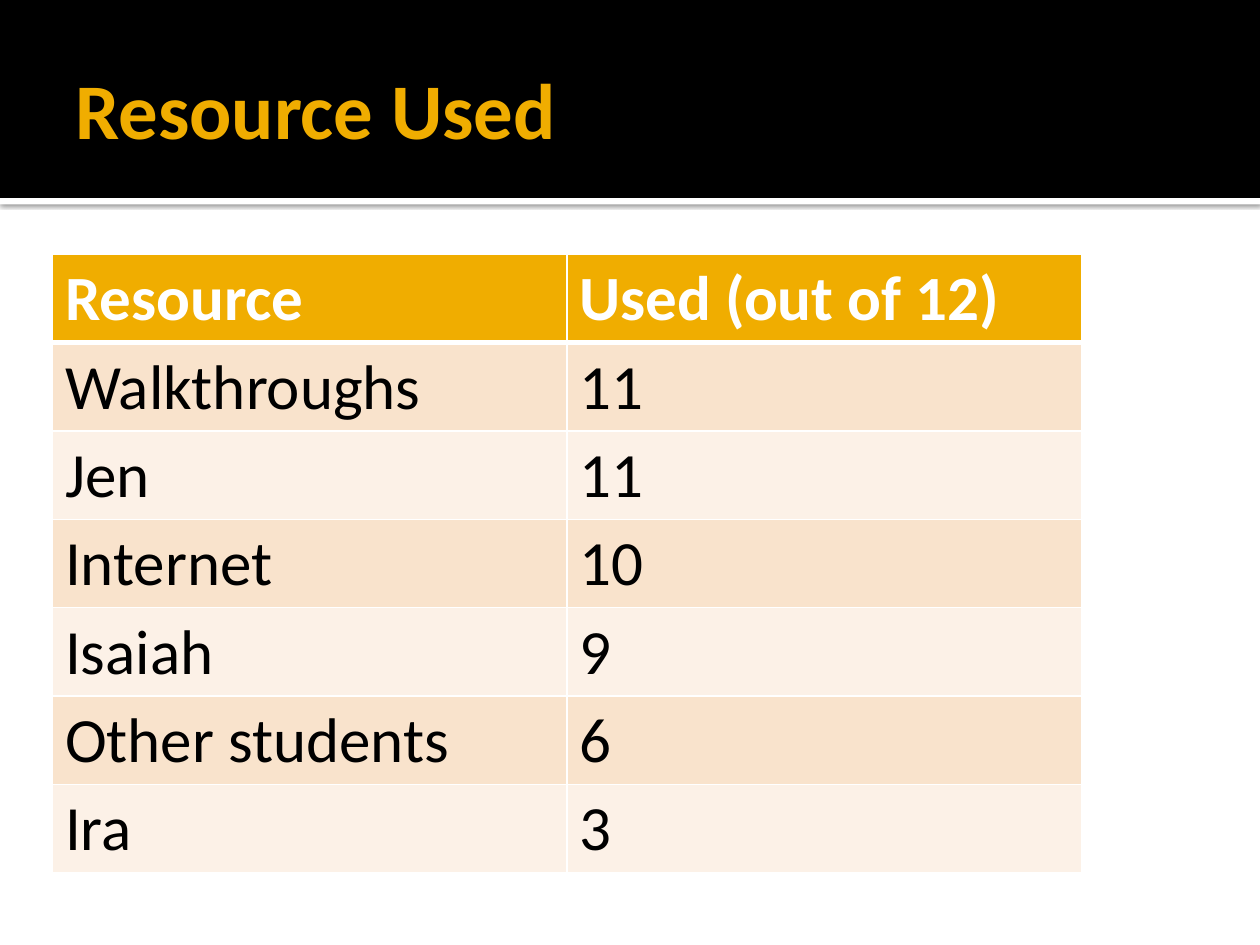
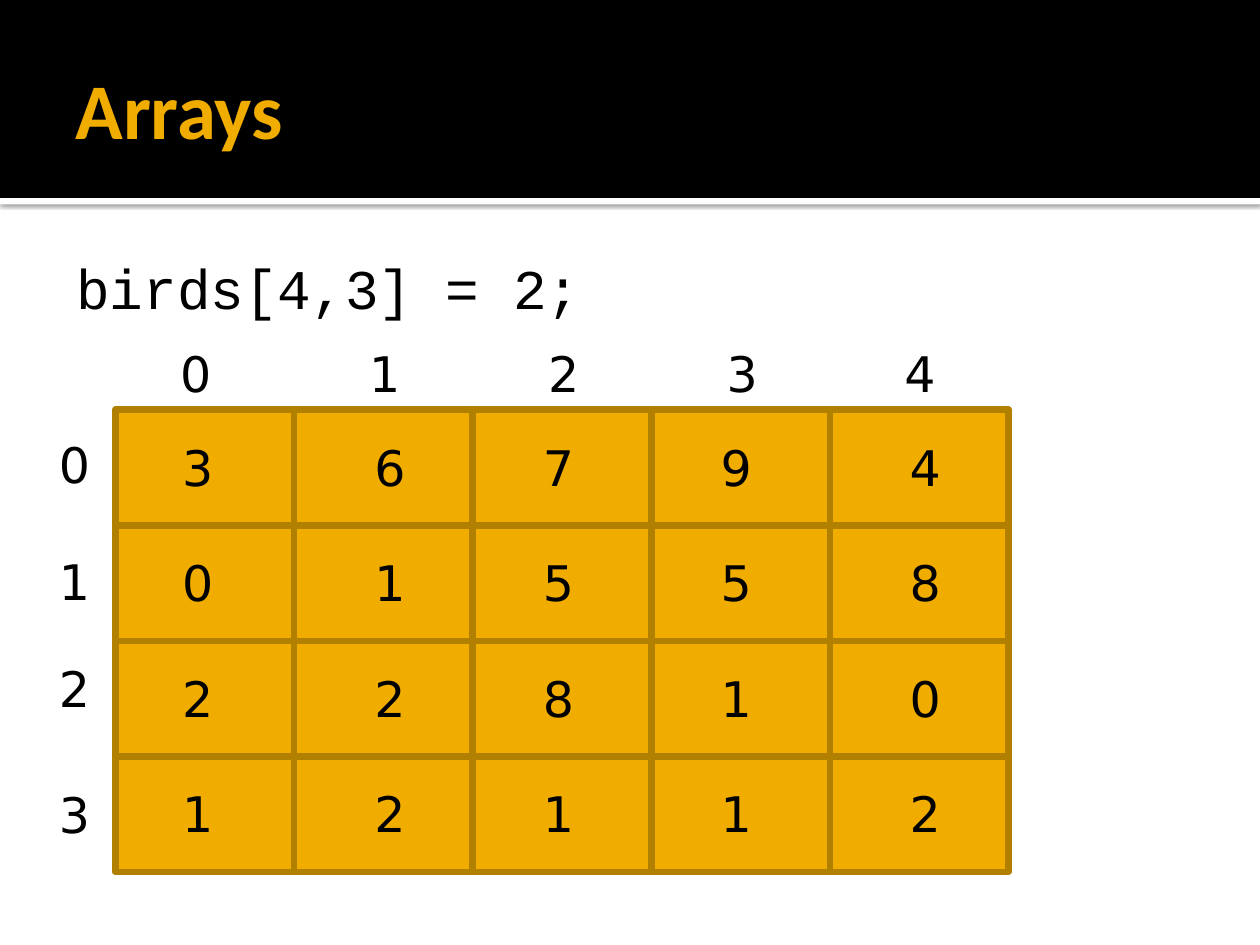
from lxml.etree import SubElement
from pptx import Presentation
from pptx.dml.color import RGBColor
from pptx.enum.shapes import MSO_SHAPE
from pptx.enum.text import MSO_ANCHOR, PP_ALIGN
from pptx.oxml import parse_xml
from pptx.oxml.ns import nsdecls, qn
from pptx.util import Cm, Pt

GOLD = RGBColor(0xF0, 0xAD, 0x00)
DARK_GOLD = RGBColor(0xB2, 0x80, 0x00)
PEACH = RGBColor(0xF9, 0xE3, 0xCC)
CREAM = RGBColor(0xFC, 0xF1, 0xE7)
BLACK = RGBColor(0x00, 0x00, 0x00)
WHITE = RGBColor(0xFF, 0xFF, 0xFF)

STRIP_SHADOW = (
    f'<a:effectLst {nsdecls("a")}>'
    '<a:outerShdw blurRad="31750" dist="10160" dir="5400000" algn="tl" rotWithShape="0">'
    '<a:srgbClr val="000000"><a:alpha val="60000"/></a:srgbClr>'
    '</a:outerShdw></a:effectLst>'
)


def write(tf, text, font="DejaVu Sans", size=28, color=BLACK, bold=False,
          align=PP_ALIGN.LEFT):
    p = tf.paragraphs[0]
    p.alignment = align
    r = p.add_run()
    r.text = text
    r.font.name = font
    r.font.size = Pt(size)
    r.font.color.rgb = color
    r.font.bold = bold
    return p


def add_text(s, text, x, y, w=1.14, h=1.45, wrap=False, **style):
    tf = s.shapes.add_textbox(Cm(x), Cm(y), Cm(w), Cm(h)).text_frame
    tf.word_wrap = wrap
    write(tf, text, **style)
    return tf


prs = Presentation()
prs.slide_width = Cm(25.4)
prs.slide_height = Cm(19.05)

for title in ("Resource Used", "Arrays"):
    s = prs.slides.add_slide(prs.slide_layouts[6])
    for top, height, color in ((3.99, 0.13, WHITE), (0, 3.99, BLACK)):
        sp = s.shapes.add_shape(MSO_SHAPE.RECTANGLE, 0, Cm(top), prs.slide_width, Cm(height))
        sp.fill.solid()
        sp.fill.fore_color.rgb = color
        sp.line.fill.background()
        if color == WHITE:
            sp._element.spPr.append(parse_xml(STRIP_SHADOW))
        else:
            sp.shadow.inherit = False
    tf = add_text(s, title, 1.27, 0.43, 22.86, 3.48, wrap=True,
                  font="Calibri", size=45, color=GOLD, bold=True)
    tf.vertical_anchor = MSO_ANCHOR.MIDDLE
    tf.margin_right = Cm(0.13)

resources, arrays = prs.slides

usage = [
    ("Resource", "Used (out of 12)"),
    ("Walkthroughs", "11"),
    ("Jen", "11"),
    ("Internet", "10"),
    ("Isaiah", "9"),
    ("Other students", "6"),
    ("Ira", "3"),
]
table = resources.shapes.add_table(
    len(usage), 2, Cm(1.06), Cm(5.13), Cm(20.74), Cm(12.46)).table
for row, values in enumerate(usage):
    table.rows[row].height = Cm(1.78)
    header = row == 0
    for col, value in enumerate(values):
        cell = table.cell(row, col)
        write(cell.text_frame, value, font="Calibri", size=36,
              color=WHITE if header else BLACK, bold=header)
        tcPr = cell._tc.get_or_add_tcPr()
        for side in ("L", "R", "T", "B"):
            thick = (header and side == "B") or (row == 1 and side == "T")
            ln = SubElement(tcPr, qn(f"a:ln{side}"), w=str(Pt(3 if thick else 1)))
            SubElement(SubElement(ln, qn("a:solidFill")), qn("a:srgbClr"), val=str(WHITE))
        cell.fill.solid()
        cell.fill.fore_color.rgb = GOLD if header else PEACH if row % 2 else CREAM

tf = add_text(arrays, "birds[4,3] = 2;", 1.06, 4.65, 22.86, 13.77, wrap=True,
              font="Courier New", size=32)
tf.margin_left = Cm(0.15)
tf.margin_top = Cm(0.46)
pPr = tf.paragraphs[0]._p.get_or_add_pPr()
pPr.set("marL", str(Cm(1.22)))
pPr.set("indent", str(Cm(-0.89)))

birds = ["36794", "01558", "22810", "12112"]
cell_w, cell_h = 3.6, 2.33
grid_left, grid_top = 2.33, 8.26
value_lefts = [3.42, 7.29, 10.69, 14.27, 18.08]

for col, x in enumerate((3.38, 7.19, 10.8, 14.4, 17.98)):
    add_text(arrays, str(col), x, 6.81)

for row, values in enumerate(birds):
    y = grid_top + row * cell_h
    for col in range(len(values)):
        sp = arrays.shapes.add_shape(
            MSO_SHAPE.RECTANGLE, Cm(grid_left + col * cell_w), Cm(y), Cm(cell_w), Cm(cell_h))
        sp.shadow.inherit = False
        sp.fill.solid()
        sp.fill.fore_color.rgb = GOLD
        sp.line.color.rgb = DARK_GOLD
        sp.line.width = Pt(3.78)
    for col, (x, value) in enumerate(zip(value_lefts, values)):
        add_text(arrays, value, x, y + 0.43,
                 align=PP_ALIGN.CENTER if col else PP_ALIGN.LEFT)

for row, y in enumerate((8.64, 11, 13.16, 15.7)):
    add_text(arrays, str(row), 0.94, y)

prs.save("out.pptx")
